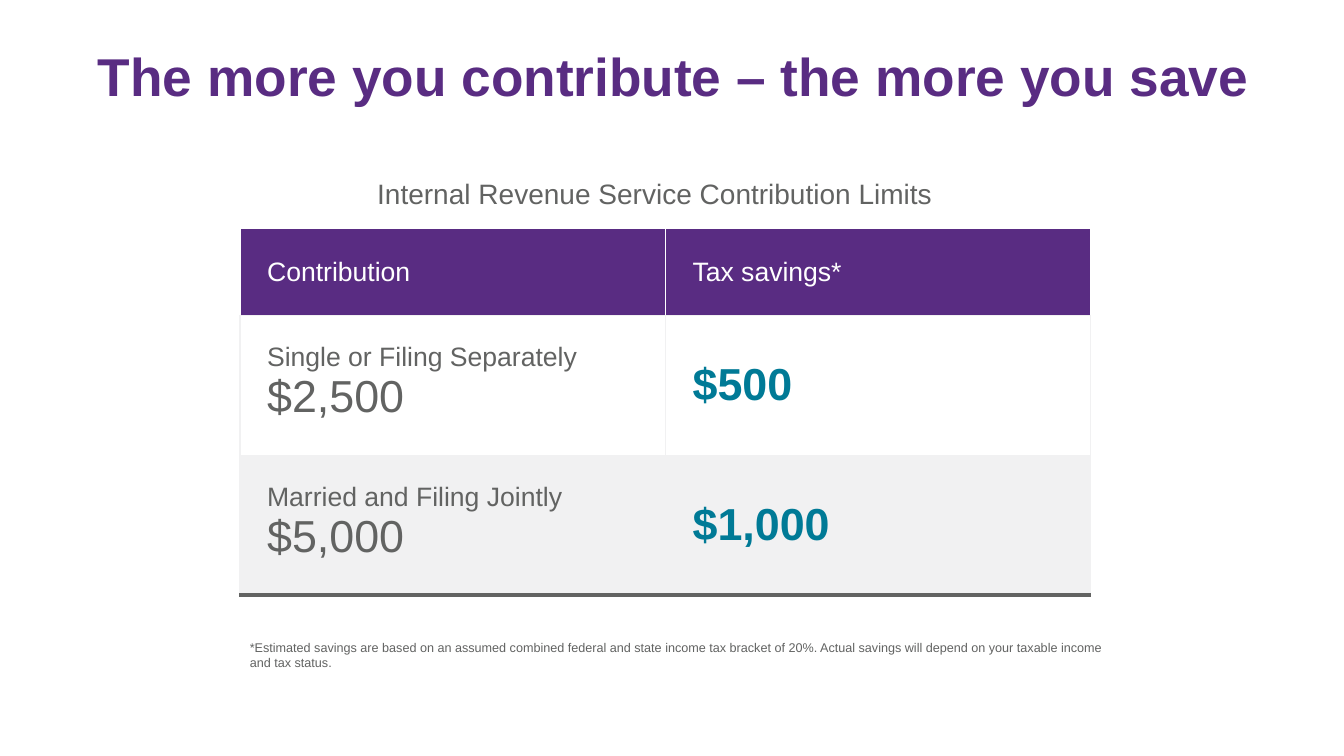
from lxml import etree
from pptx import Presentation
from pptx import util as u
from pptx.dml.color import RGBColor
from pptx.enum import text
from pptx.oxml import ns

COLORS = {
    "purple": "592C82",
    "gray": "626362",
    "teal": "007A96",
    "pale": "F1F1F2",
    "white": "FFFFFF",
}
LABEL = {"size": 19, "color": "gray"}
AMOUNT = {"size": 32, "color": "gray"}
SAVING = {"size": 32, "color": "teal", "bold": True}
HEADER = {"size": 19, "color": "white"}

WHITE_EDGE, PALE_EDGE, BASE_EDGE = ("white", 1), ("pale", 1), ("gray", 3)
# Each row style: fill and borders in the order left, right, top, bottom
HEADER_ROW = ("purple", [WHITE_EDGE] * 3 + [PALE_EDGE])
PLAIN_ROW = (None, [PALE_EDGE] * 4)
SHADED_ROW = ("pale", [PALE_EDGE] * 3 + [BASE_EDGE])

TABLE_LEFT = 17.85
MIDDLE = text.MSO_ANCHOR.MIDDLE
TOP = text.MSO_ANCHOR.TOP


def set_margins(holder, inches):
    for side in ("left", "right", "top", "bottom"):
        setattr(holder, f"margin_{side}", u.Inches(inches))


class SlideBuilder:
    """Places elements on a grid of 100 columns by 100 rows."""

    def __init__(self, deck):
        self.column = deck.slide_width / 100
        self.row = deck.slide_height / 100
        self.slide = deck.slides.add_slide(deck.slide_layouts[5])

    def area(self, left, top, width, height):
        return (int(left * self.column), int(top * self.row),
                int(width * self.column), int(height * self.row))

    def add_lines(self, frame, lines, align=text.PP_ALIGN.LEFT):
        """Fill a text frame with (words, format) pairs, one per paragraph."""
        for index, (words, style) in enumerate(lines):
            para = frame.add_paragraph() if index else frame.paragraphs[0]
            para.alignment = align
            span = para.add_run()
            span.text = words
            values = {"name": "Arial", "bold": False, **style}
            span.font.color.rgb = RGBColor.from_string(COLORS[values.pop("color")])
            values["size"] = u.Pt(values["size"])
            for name, value in values.items():
                setattr(span.font, name, value)

    def title(self, words, area, style):
        box = self.slide.shapes.title
        box.left, box.top, box.width, box.height = self.area(*area)
        frame = box.text_frame
        set_margins(frame, 0.1)
        frame.word_wrap = True
        frame.auto_size = text.MSO_AUTO_SIZE.NONE
        frame.vertical_anchor = MIDDLE
        self.add_lines(frame, [(words, style)])

    def text_box(self, words, area, style, align=text.PP_ALIGN.LEFT):
        frame = self.slide.shapes.add_textbox(*self.area(*area)).text_frame
        frame.word_wrap = True
        self.add_lines(frame, [(words, style)], align)

    def border(self, cell, edges):
        properties = cell._tc.get_or_add_tcPr()
        for index, (side, (color, points)) in enumerate(zip("LRTB", edges)):
            line = etree.Element(ns.qn(f"a:ln{side}"), w=str(u.Pt(points)))
            fill = etree.SubElement(line, ns.qn("a:solidFill"))
            etree.SubElement(fill, ns.qn("a:srgbClr"), val=COLORS[color])
            properties.insert(index, line)

    def cell(self, cell, lines, fill, edges):
        set_margins(cell, 0.27)
        cell.vertical_anchor = MIDDLE if len(lines) == 1 else TOP
        if fill:
            cell.fill.solid()
            cell.fill.fore_color.rgb = RGBColor.from_string(COLORS[fill])
        else:
            cell.fill.background()
        self.border(cell, edges)
        self.add_lines(cell.text_frame, lines)

    def table(self, left, top, column_width, row_heights, rows):
        """Each row is (row style, list of cells); each cell is a list of lines."""
        columns = len(rows[0][1])
        area = self.area(left, top, column_width * columns, sum(row_heights))
        table = self.slide.shapes.add_table(len(rows), columns, *area).table
        table.first_row = table.horz_banding = False
        for index, ((fill, edges), cells) in enumerate(rows):
            table.rows[index].height = int(row_heights[index] * self.row)
            for position, lines in enumerate(cells):
                self.cell(table.cell(index, position), lines, fill, edges)


def main():
    deck = Presentation()
    deck.slide_width, deck.slide_height = u.Inches(13.33), u.Inches(7.5)
    page = SlideBuilder(deck)
    page.title("The more you contribute – the more you save",
               (6.53, 4.4, 90, 11.2),
               {"size": 38, "color": "purple", "bold": True})
    page.text_box("Internal Revenue Service Contribution Limits",
                  (24.68, 22.67, 48.09, 7.33),
                  {"size": 20, "color": "gray"}, text.PP_ALIGN.CENTER)
    page.table(TABLE_LEFT, 30.27, 31.66, [11.2, 18.4, 18.4], [
        (HEADER_ROW, [[("Contribution", HEADER)], [("Tax savings*", HEADER)]]),
        (PLAIN_ROW, [[("Single or Filing Separately", LABEL), ("$2,500", AMOUNT)],
                     [("$500", SAVING)]]),
        (SHADED_ROW, [[("Married and Filing Jointly", LABEL), ("$5,000", AMOUNT)],
                      [("$1,000", SAVING)]]),
    ])
    page.text_box("*Estimated savings are based on an assumed combined federal and "
                  "state income tax bracket of 20%. Actual savings will depend on "
                  "your taxable income and tax status.",
                  (TABLE_LEFT, 84, 65.12, 6.93), {"size": 9, "color": "gray"})
    deck.save("out.pptx")


if __name__ == "__main__":
    main()
